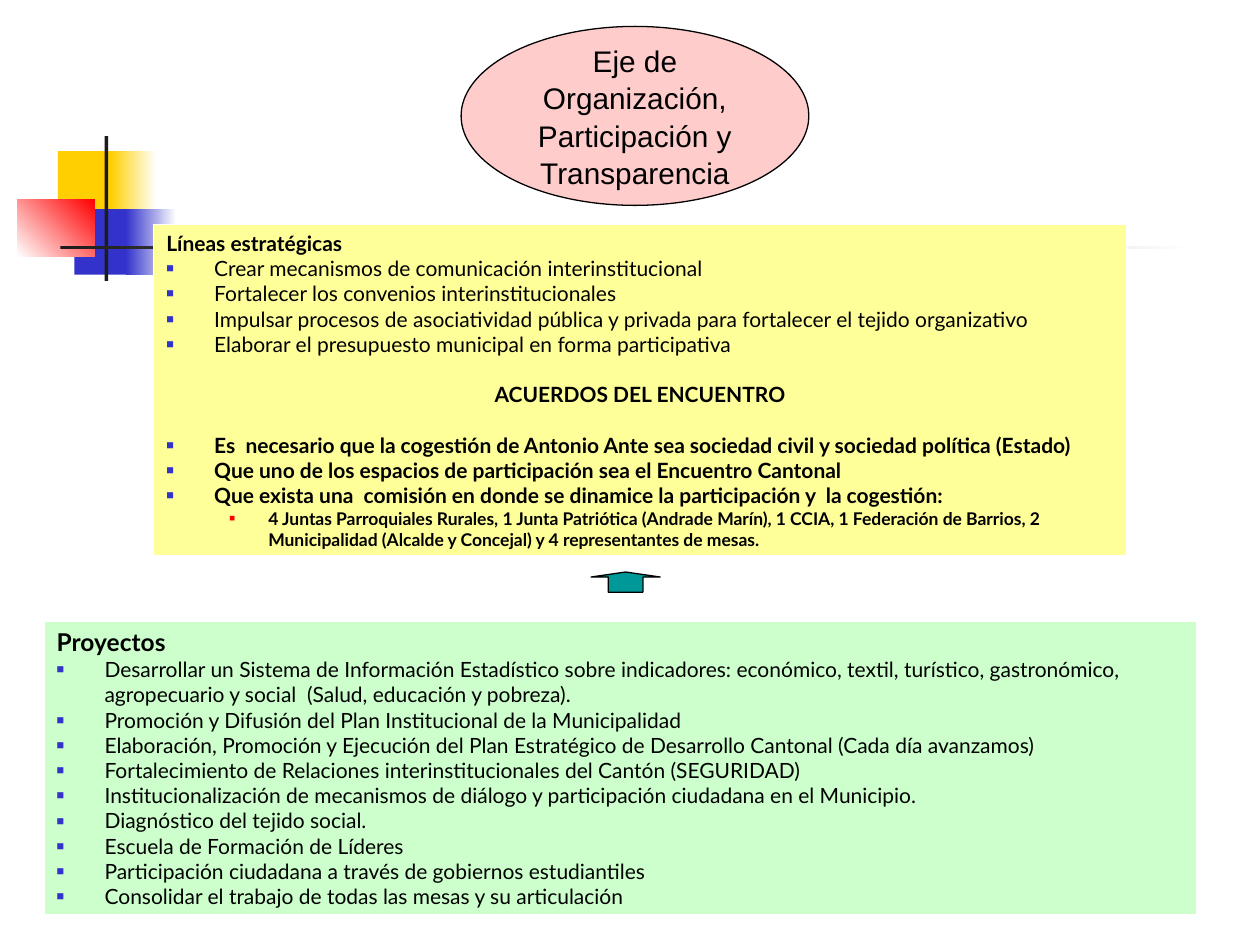
"""Build the slide on the organisation, participation and transparency axis."""
import pptx
import pptx.dml.color
import pptx.enum.shapes
import pptx.enum.text
import pptx.oxml
import pptx.oxml.ns
import pptx.util
from pptx.dml.color import RGBColor
from pptx.util import Inches

BLACK = RGBColor(0x00, 0x00, 0x00)
WHITE = RGBColor(0xFF, 0xFF, 0xFF)
CHARCOAL = RGBColor(0x1C, 0x1C, 0x1C)
GOLD = RGBColor(0xFF, 0xCF, 0x01)
BLUE = RGBColor(0x33, 0x33, 0xCC)
RED = RGBColor(0xFF, 0x00, 0x00)
TEAL = RGBColor(0x00, 0x99, 0x99)
PINK = RGBColor(0xFF, 0xCC, 0xCC)
YELLOW = RGBColor(0xFF, 0xFF, 0x99)
GREEN = RGBColor(0xCC, 0xFF, 0xCC)

SHAPES = pptx.enum.shapes.MSO_SHAPE
CENTER = pptx.enum.text.PP_ALIGN.CENTER
ANCHOR = pptx.enum.text.MSO_ANCHOR

presentation = pptx.Presentation()
presentation.slide_width = Inches(10)
presentation.slide_height = Inches(7.5)
slide = presentation.slides.add_slide(presentation.slide_layouts[6])


def add_filled_shape(kind, box, colors, angle=0, outlined=False):
    shape = slide.shapes.add_shape(kind, *[Inches(length) for length in box])
    shape.shadow.inherit = False
    if len(colors) == 1:
        shape.fill.solid()
        shape.fill.fore_color.rgb = colors[0]
    else:
        shape.fill.gradient()
        shape.fill.gradient_angle = angle
        for stop, color, position in zip(shape.fill.gradient_stops, colors, (0, 1)):
            stop.color.rgb = color
            stop.position = position
    if outlined:
        shape.line.color.rgb = BLACK
        shape.line.width = pptx.util.Pt(0.75)
    else:
        shape.line.fill.background()
    return shape


def set_indent(paragraph, margin, hanging, bullet_color=None, bullet_percent=60):
    properties = paragraph._p.get_or_add_pPr()
    properties.set("marL", str(Inches(margin)))
    properties.set("indent", str(-Inches(hanging)))
    if bullet_color is None:
        return
    namespace = pptx.oxml.ns.nsdecls("a")
    for xml in (
        f'<a:buClr {namespace}><a:srgbClr val="{bullet_color}"/></a:buClr>',
        f'<a:buSzPct {namespace} val="{bullet_percent * 1000}"/>',
        f'<a:buFont {namespace} typeface="Arial"/>',
        f'<a:buChar {namespace} char="■"/>',
    ):
        properties.append(pptx.oxml.parse_xml(xml))


decorations = [
    ((0.46, 1.2, 0.48, 0.52), [GOLD], 0),
    ((0.88, 1.2, 0.36, 0.52), [GOLD, WHITE], 0),
    ((0.59, 1.66, 0.46, 0.52), [BLUE], 0),
    ((1, 1.66, 0.4, 0.52), [BLUE, WHITE], 0),
    ((0.14, 1.58, 0.61, 0.46), [WHITE, RED], 45),
    ((0.83, 1.08, 0.03, 1.15), [CHARCOAL], 0),
    ((0.48, 1.95, 9, 0.03), [CHARCOAL, WHITE], 0),
]
for box, colors, angle in decorations:
    add_filled_shape(SHAPES.RECTANGLE, box, colors, angle)

strategy_lines = [
    ("heading", "Líneas estratégicas", 12, True),
    ("bullet", "Crear mecanismos de comunicación interinstitucional", 12, False),
    ("bullet", "Fortalecer los convenios interinstitucionales", 12, False),
    ("bullet", "Impulsar procesos de asociatividad pública y privada para fortalecer el tejido organizativo", 12, False),
    ("bullet", "Elaborar el presupuesto municipal en forma participativa", 12, False),
    ("centered", "ACUERDOS DEL ENCUENTRO", 12, True),
    ("bullet", "Es  necesario que la cogestión de Antonio Ante sea sociedad civil y sociedad política (Estado)", 12, True),
    ("bullet", "Que uno de los espacios de participación sea el Encuentro Cantonal", 12, True),
    ("bullet", "Que exista una  comisión en donde se dinamice la participación y  la cogestión:", 12, True),
    ("subbullet", "4 Juntas Parroquiales Rurales, 1 Junta Patriótica (Andrade Marín), 1 CCIA, 1 Federación de Barrios, "
                  "2 Municipalidad (Alcalde y Concejal) y 4 representantes de mesas.", 10, True),
]
projects = [
    "Desarrollar un Sistema de Información Estadístico sobre indicadores: económico, textil, turístico, "
    "gastronómico, agropecuario y social  (Salud, educación y pobreza).",
    "Promoción y Difusión del Plan Institucional de la Municipalidad",
    "Elaboración, Promoción y Ejecución del Plan Estratégico de Desarrollo Cantonal (Cada día avanzamos)",
    "Fortalecimiento de Relaciones interinstitucionales del Cantón (SEGURIDAD)",
    "Institucionalización de mecanismos de diálogo y participación ciudadana en el Municipio.",
    "Diagnóstico del tejido social.",
    "Escuela de Formación de Líderes",
    "Participación ciudadana a través de gobiernos estudiantiles",
    "Consolidar el trabajo de todas las mesas y su articulación",
]
project_lines = [("heading", "Proyectos", 14, True)]
project_lines += [("bullet", project, 12, False) for project in projects]

panels = [
    ((1.22, 1.78, 7.72, 2.63), YELLOW, strategy_lines),
    ((0.35, 4.93, 9.15, 2.33), GREEN, project_lines),
]
for box, color, lines in panels:
    table = slide.shapes.add_table(1, 1, *[Inches(length) for length in box]).table
    table.first_row = False
    table.horz_banding = False
    cell = table.cell(0, 0)
    cell.fill.solid()
    cell.fill.fore_color.rgb = color
    cell.vertical_anchor = ANCHOR.BOTTOM
    for index, (role, text, size, bold) in enumerate(lines):
        paragraph = cell.text_frame.paragraphs[0] if index == 0 else cell.text_frame.add_paragraph()
        if role == "subbullet":
            paragraph.level = 1
            set_indent(paragraph, 0.81, 0.31, RED, 55)
        elif role == "bullet":
            set_indent(paragraph, 0.38, 0.38, BLUE)
        else:
            set_indent(paragraph, 0.38, 0.38)
        if role == "centered":
            paragraph.alignment = CENTER
            paragraph.space_before = pptx.util.Pt(14.4)
            paragraph.space_after = pptx.util.Pt(14.4)
        run = paragraph.add_run()
        run.text = text
        run.font.name = "Lato"
        run.font.size = pptx.util.Pt(size)
        run.font.bold = bold
        run.font.color.rgb = BLACK

arrow = add_filled_shape(SHAPES.UP_ARROW, (4.69, 4.54, 0.55, 0.16), [TEAL], outlined=True)
arrow.adjustments[0] = 0.5
arrow.adjustments[1] = 0.25

axis_ellipse = add_filled_shape(SHAPES.OVAL, (3.66, 0.21, 2.76, 1.42), [PINK], outlined=True)
axis_frame = axis_ellipse.text_frame
axis_frame.word_wrap = False
axis_frame.vertical_anchor = ANCHOR.MIDDLE
for index, text in enumerate(["Eje de", "Organización,", "Participación y", "Transparencia"]):
    paragraph = axis_frame.paragraphs[0] if index == 0 else axis_frame.add_paragraph()
    paragraph.alignment = CENTER
    paragraph.line_spacing = 1.04
    run = paragraph.add_run()
    run.text = text
    run.font.name = "Arial"
    run.font.size = pptx.util.Pt(17)
    run.font.color.rgb = BLACK

presentation.save("out.pptx")
